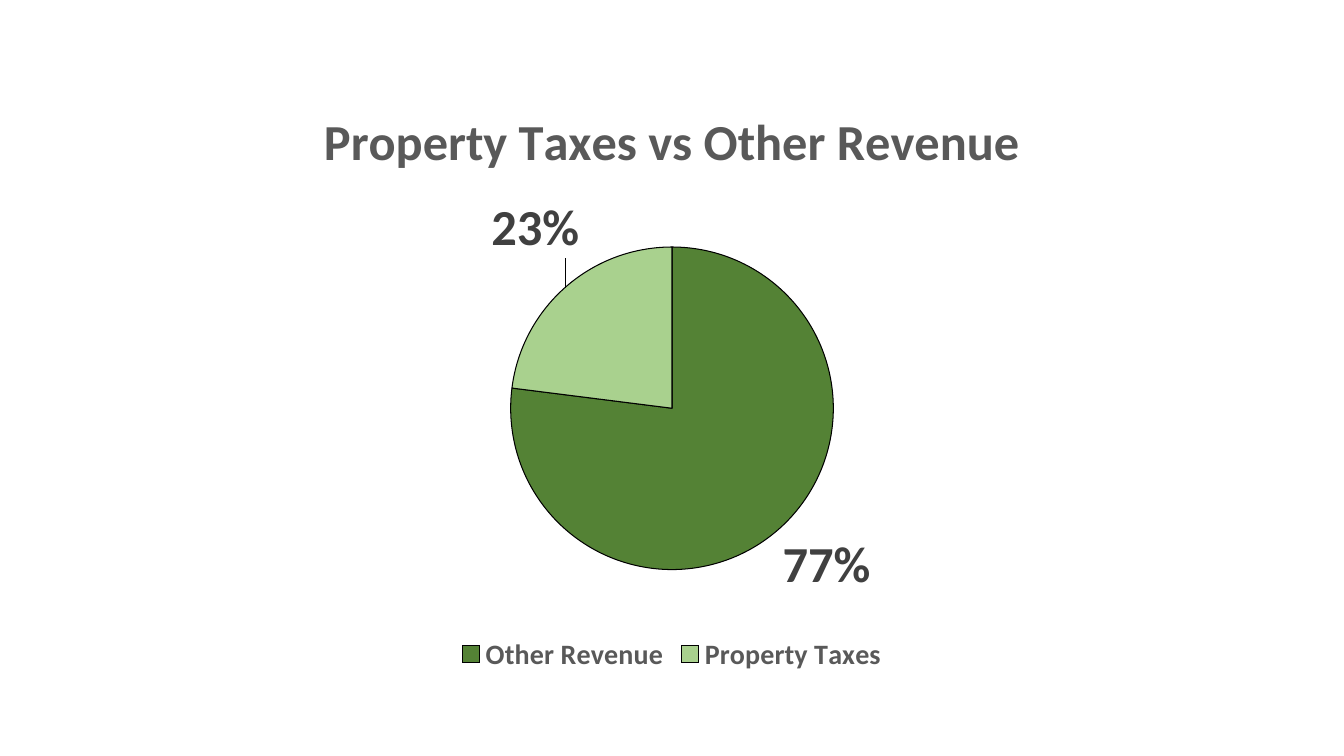
import pptx
import pptx.util
import pptx.chart.data
import pptx.dml.color
import pptx.enum.chart
import pptx.oxml

RGB = pptx.dml.color.RGBColor
GREEN = RGB(0x54, 0x82, 0x35)
LIGHT = RGB(0xA9, 0xD1, 0x8E)
BLACK = RGB(0, 0, 0)
GRAY = RGB(0x59, 0x59, 0x59)
DARK = RGB(0x40, 0x40, 0x40)
FACE = "Calibri"
NS = "http://schemas.openxmlformats.org/drawingml/2006/chart"
SCALE = 9144


def px(count):
    return pptx.util.Emu(count * SCALE)


def style(font, size, color, bold=True):
    font.name = FACE
    font.size = pptx.util.Pt(size)
    font.bold = bold
    font.color.rgb = color


def write(frame, text, **form):
    frame.text = text
    style(frame.paragraphs[0].runs[0].font, **form)


def layout(x, y, wide=None, high=None):
    parts = ""
    if wide:
        parts = ('<c:layoutTarget val="inner"/>'
                 '<c:xMode val="edge"/><c:yMode val="edge"/>')
    sizes = {"x": x, "y": y, "w": wide, "h": high}
    parts += "".join(f'<c:{key} val="{size}"/>'
                     for key, size in sizes.items() if size is not None)
    return pptx.oxml.parse_xml(
        f'<c:layout xmlns:c="{NS}"><c:manualLayout>{parts}'
        '</c:manualLayout></c:layout>')


def place(parent, node, index):
    for old in parent.findall(f"{{{NS}}}layout"):
        parent.remove(old)
    parent.insert(index, node)


def label(series):
    tags = series.data_labels
    tags.show_value = True
    tags.number_format = "0%"
    tags.number_format_is_linked = False
    outside = pptx.enum.chart.XL_LABEL_POSITION.OUTSIDE_END
    tags.position = outside
    style(tags.font, size=36, color=DARK)
    for index in range(2):
        tag = series.points[index].data_label
        style(tag.font, size=36, color=DARK)
        tag.position = outside
    moved = tags._element.findall(f"{{{NS}}}dLbl")[1]
    place(moved, layout(0.02, -0.04), 1)


def pie(slide, left, top, width, height):
    data = pptx.chart.data.CategoryChartData(number_format="0%")
    data.categories = ["Other Revenue", "Property Taxes"]
    data.add_series("Series 1", (0.77, 0.23))
    chart = slide.shapes.add_chart(
        pptx.enum.chart.XL_CHART_TYPE.PIE,
        px(left), px(top), px(width), px(height), data).chart
    style(chart.font, size=10, color=BLACK, bold=False)
    chart.has_title = True
    write(chart.chart_title.text_frame, "Property Taxes vs Other Revenue",
          size=36, color=GRAY)
    chart.chart_title.include_in_layout = False
    chart.has_legend = True
    legend = chart.legend
    legend.position = pptx.enum.chart.XL_LEGEND_POSITION.BOTTOM
    legend.include_in_layout = False
    style(legend.font, size=20, color=GRAY)
    plot = chart.plots[0]
    plot.vary_by_categories = True
    series = plot.series[0]
    for index, color in enumerate((GREEN, LIGHT)):
        form = series.points[index].format
        form.fill.solid()
        form.fill.fore_color.rgb = color
        form.line.color.rgb = BLACK
        form.line.width = pptx.util.Pt(0.75)
    label(series)
    area = chart._chartSpace.chart.plotArea
    place(area, layout(0.32, 0.28, 0.36, 0.54), 0)


def main():
    deck = pptx.Presentation()
    deck.slide_width, deck.slide_height = px(1333), px(750)
    slide = deck.slides.add_slide(deck.slide_layouts[6])
    pie(slide, 222, 79, 889, 593)
    deck.save("out.pptx")


if __name__ == "__main__":
    main()
